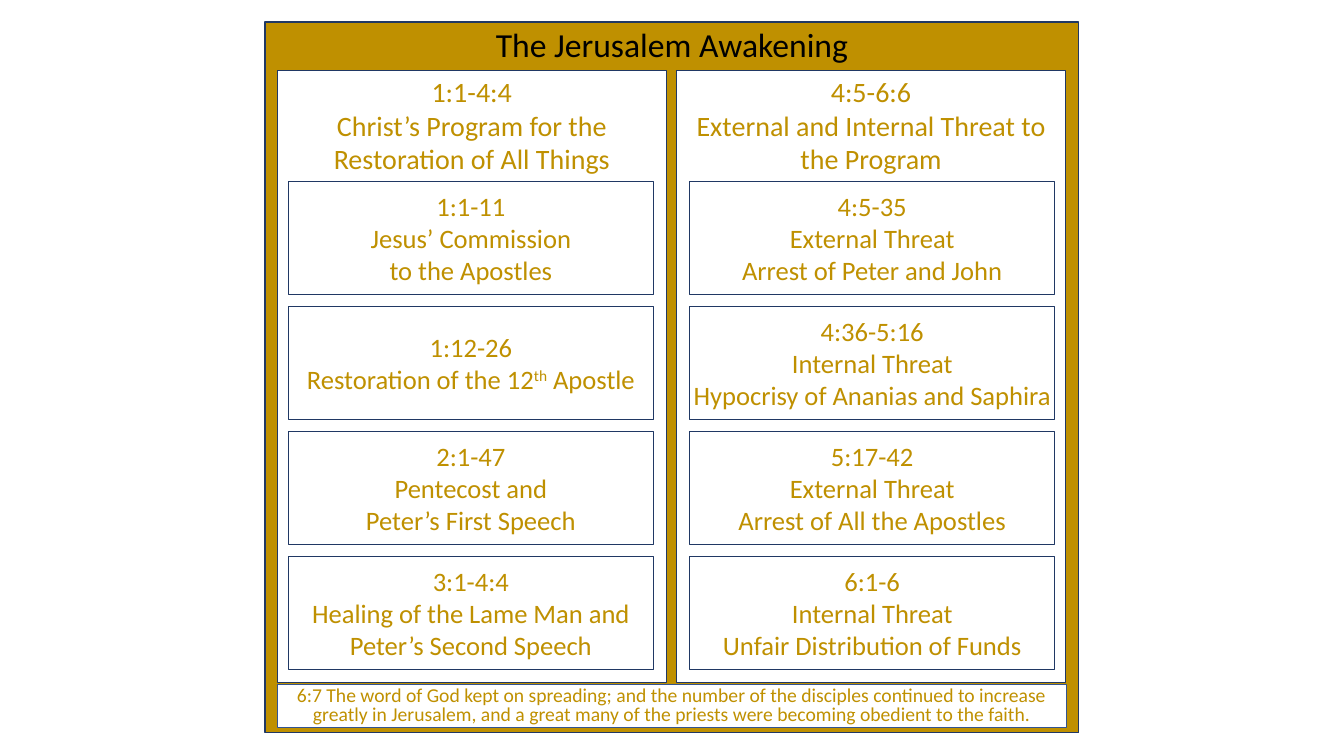
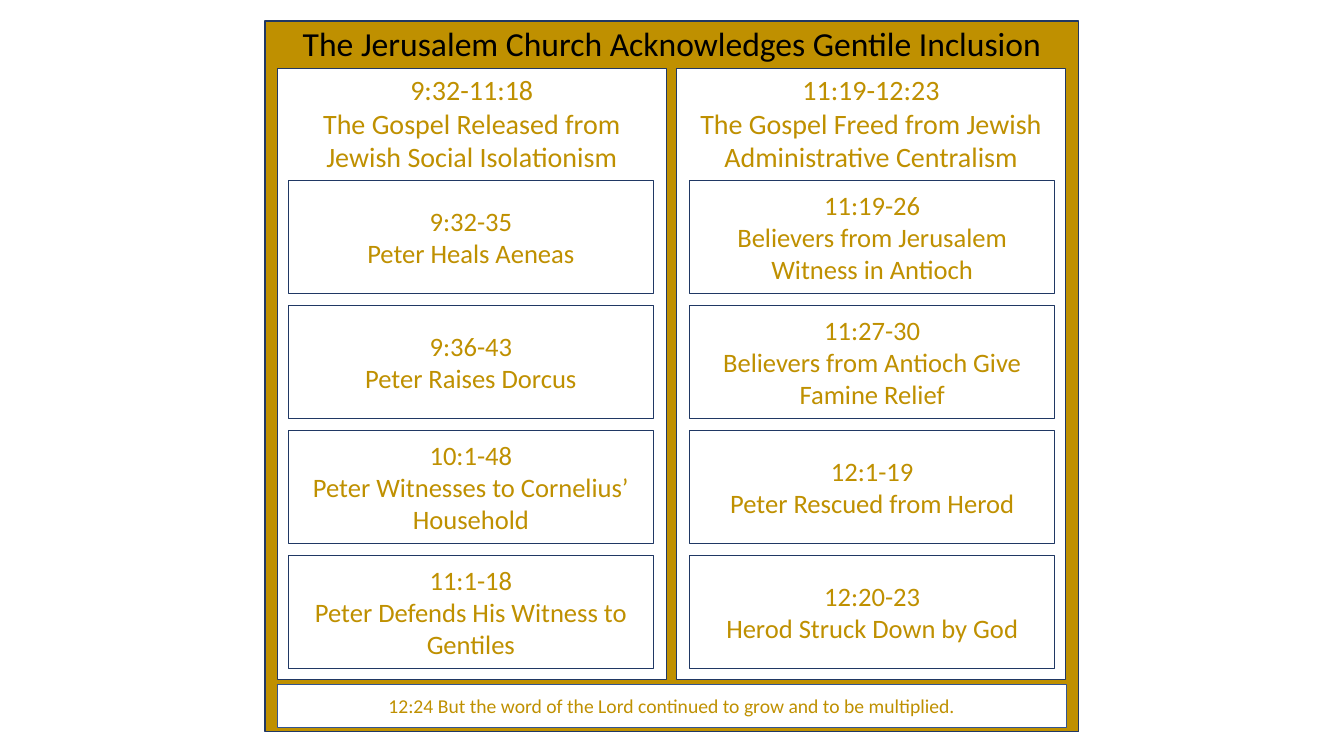
from pptx import Presentation, util as u
from pptx.dml.color import RGBColor
from pptx.enum import shapes, text

COLOURS = {"gold": "BF9000", "navy": "203864", "blue": "325491",
           "white": "FFFFFF", "black": "000000"}
FONT = "Calibri"

# Shared geometry, in inches
FRAME_LEFT, FRAME_WIDTH, FRAME_HEIGHT = 2.63, 8.07, 7.05
COLUMN_LEFTS, COLUMN_WIDTH = (2.75, 6.71), 3.86
CARD_LEFTS, CARD_WIDTH, CARD_HEIGHT, CARD_PITCH = (2.86, 6.84), 3.62, 1.12, 1.24
FOOTER = (2.75, 6.79, 7.83, 0.43)

# Each column holds its heading lines and its cards; ^ encloses superscript
CHARTS = [
    {
        "title": "The Jerusalem Awakening",
        "frame_top": 0.22, "column_top": 0.7, "column_height": 6.07, "card_top": 1.8,
        "columns": [
            (["1:1-4:4", "Christ’s Program for the Restoration of All Things"],
             [["1:1-11", "Jesus’ Commission", "to the Apostles"],
              ["1:12-26", "Restoration of the 12^th^ Apostle"],
              ["2:1-47", "Pentecost and", "Peter’s First Speech"],
              ["3:1-4:4", "Healing of the Lame Man and Peter’s Second Speech"]]),
            (["4:5-6:6", "External and Internal Threat to the Program"],
             [["4:5-35", "External Threat", "Arrest of Peter and John"],
              ["4:36-5:16", "Internal Threat", "Hypocrisy of Ananias and Saphira"],
              ["5:17-42", "External Threat", "Arrest of All the Apostles"],
              ["6:1-6", "Internal Threat", "Unfair Distribution of Funds"]]),
        ],
        "footer": "6:7 The word of God kept on spreading; and the number of the "
                  "disciples continued to increase greatly in Jerusalem, and a great "
                  "many of the priests were becoming obedient to the faith.",
        "footer_spacing": 0.8,
    },
    {
        "title": "The Jerusalem Church Acknowledges Gentile Inclusion",
        "frame_top": 0.21, "column_top": 0.68, "column_height": 6.06, "card_top": 1.79,
        "columns": [
            (["9:32-11:18", "The Gospel Released from", "Jewish Social Isolationism"],
             [["9:32-35", "Peter Heals Aeneas"],
              ["9:36-43", "Peter Raises Dorcus"],
              ["10:1-48", "Peter Witnesses to Cornelius’ Household"],
              ["11:1-18", "Peter Defends His Witness to Gentiles"]]),
            (["11:19-12:23", "The Gospel Freed from Jewish Administrative Centralism"],
             [["11:19-26", "Believers from Jerusalem Witness in Antioch"],
              ["11:27-30", "Believers from Antioch Give Famine Relief"],
              ["12:1-19", "Peter Rescued from Herod"],
              ["12:20-23", "Herod Struck Down by God"]]),
        ],
        "footer": "12:24 But the word of the Lord continued to grow and to be multiplied.",
        "footer_spacing": 1.0,
    },
]


def add_panel(page, place, lines, size, insets, fill="white", line="navy",
              colour="gold", middle=False, spacing=1.0):
    """Add an outlined rectangle with centred lines of text."""
    box = page.shapes.add_shape(shapes.MSO_SHAPE.RECTANGLE,
                                *[u.Inches(length) for length in place])
    box.shadow.inherit = False
    box.fill.solid()
    box.fill.fore_color.rgb = RGBColor.from_string(COLOURS[fill])
    box.line.color.rgb = RGBColor.from_string(COLOURS[line])
    box.line.width = u.Pt(1)

    frame = box.text_frame
    frame.word_wrap = True
    frame.vertical_anchor = text.MSO_ANCHOR.MIDDLE if middle else text.MSO_ANCHOR.TOP
    (frame.margin_left, frame.margin_top,
     frame.margin_right, frame.margin_bottom) = [u.Inches(inset) for inset in insets]

    for index, content in enumerate(lines):
        para = frame.add_paragraph() if index else frame.paragraphs[0]
        para.alignment = text.PP_ALIGN.CENTER
        para.line_spacing = spacing
        para.font.name = FONT
        para.font.size = u.Pt(size)
        para.font.color.rgb = RGBColor.from_string(COLOURS[colour])
        for part, words in enumerate(content.split("^")):
            span = para.add_run()
            span.text = words
            if part % 2:
                span._r.get_or_add_rPr().set("baseline", "30000")


deck = Presentation()
deck.slide_width = u.Inches(13.33)
deck.slide_height = u.Inches(7.5)

for chart in CHARTS:
    page = deck.slides.add_slide(deck.slide_layouts[6])

    # Gold frame with the title
    add_panel(page, (FRAME_LEFT, chart["frame_top"], FRAME_WIDTH, FRAME_HEIGHT),
              [chart["title"]], 24, (0.1, 0.02, 0.1, 0.05), fill="gold", colour="black")

    # Two columns of cards
    for column_left, card_left, (heading, cards) in zip(COLUMN_LEFTS, CARD_LEFTS,
                                                        chart["columns"]):
        add_panel(page, (column_left, chart["column_top"], COLUMN_WIDTH,
                         chart["column_height"]), heading, 20, (0, 0.04, 0, 0))
        for row, card in enumerate(cards):
            card_top = chart["card_top"] + row * CARD_PITCH
            add_panel(page, (card_left, card_top, CARD_WIDTH, CARD_HEIGHT),
                      card, 19, (0.02,) * 4, middle=True)

    # Closing verse
    add_panel(page, FOOTER, [chart["footer"]], 14, (0.1, 0.05, 0.1, 0.05),
              line="blue", middle=True, spacing=chart["footer_spacing"])

deck.save("out.pptx")
